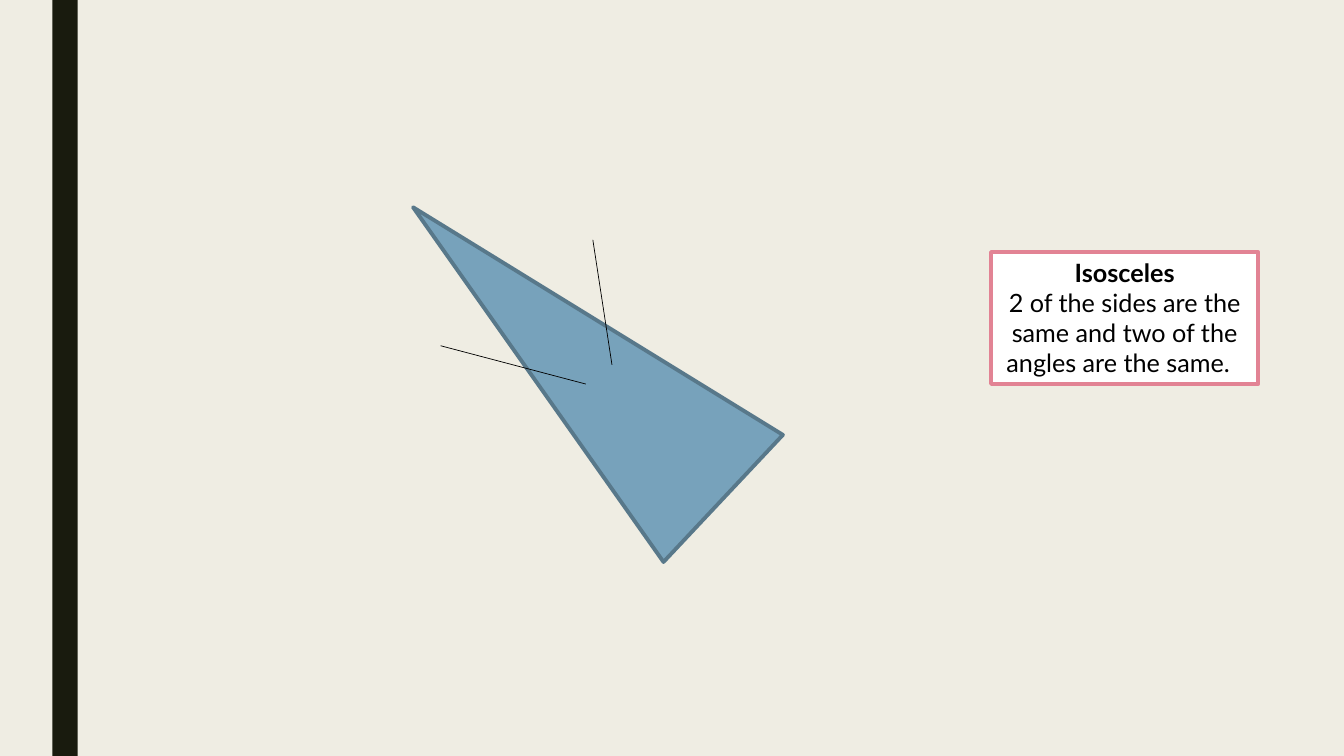
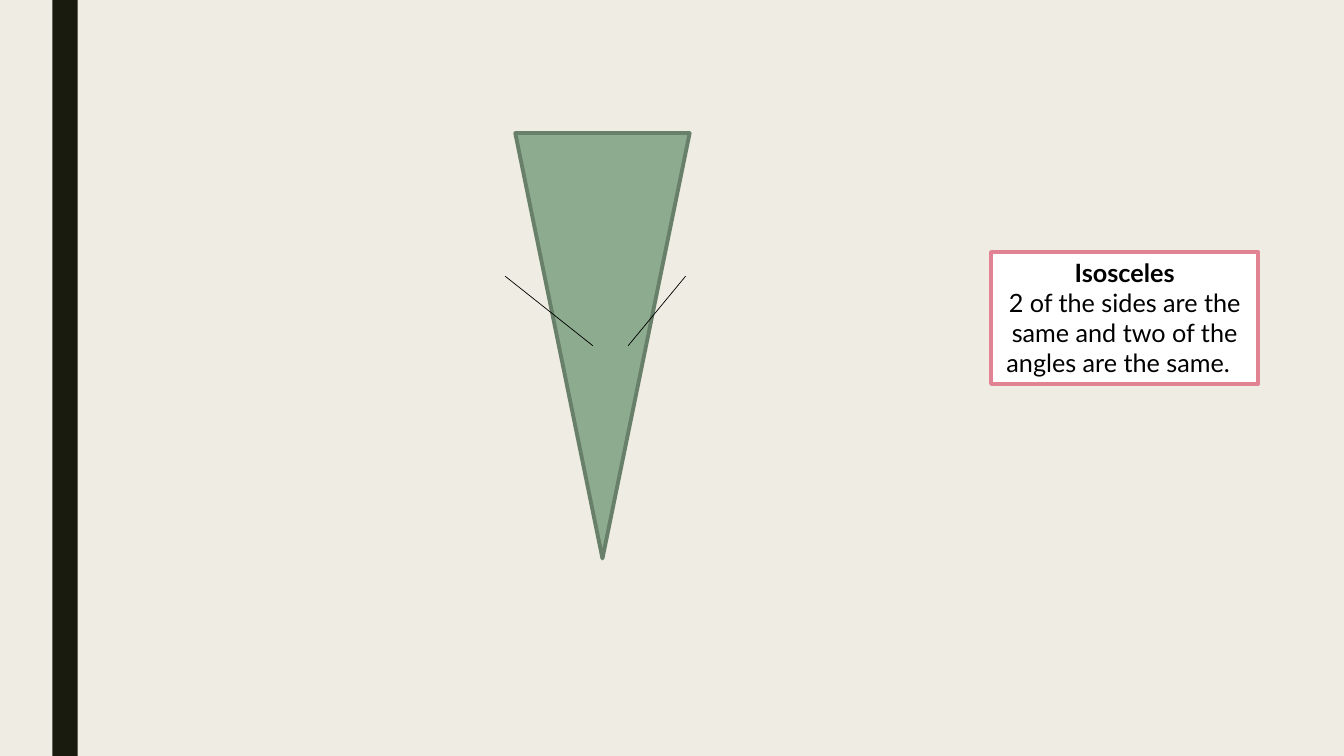
"""Build two slides on isosceles triangles, each with its side marks and definition."""
import dataclasses

import lxml.etree
import pptx
import pptx.dml.color
import pptx.enum.shapes
import pptx.enum.text
import pptx.oxml.ns
import pptx.util

Inches = pptx.util.Inches
Preset = pptx.enum.shapes.MSO_SHAPE

DEFINITION = (
    ("Isosceles", True),
    ("2 of the sides are the same and two of the angles are the same.  ", False),
)
TRIANGLES = (
    {"corner": (4.77, 1.39), "turn": 313.2, "fill": "77A2BB", "outline": "58788A",
     "marks": ((4.37, 3.43, 5.81, 3.81), (5.88, 2.38, 6.07, 3.62))},
    {"corner": (5.11, 1.32), "turn": 180, "fill": "8DAB8E", "outline": "687F69",
     "marks": ((5.01, 2.74, 5.88, 3.43), (6.8, 2.74, 6.23, 3.43))},
)

PAGE_SIZE = (13.33, 7.5)
BAND_AREA = (0.52, 0, 0.25, PAGE_SIZE[1])
DEFINITION_AREA = (9.83, 2.5, 2.65, 1.31)
TRIANGLE_SIZE = (1.73, 4.22)


@dataclasses.dataclass(frozen=True)
class Theme:
    background: str = "EFEDE3"
    band: str = "191B0E"
    paper: str = "FFFFFF"
    accent: str = "E28394"
    ink: str = "000000"
    font: str = "Lato"
    text_size: float = 18
    outline_width: float = 2.75
    mark_width: float = 0.5


THEME = Theme()


def color(value):
    return pptx.dml.color.RGBColor.from_string(value)


def add_panel(page, preset, area, fill, outline=None):
    panel = page.shapes.add_shape(preset, *map(Inches, area))
    panel.shadow.inherit = False
    panel.fill.solid()
    panel.fill.fore_color.rgb = color(fill)
    if outline:
        panel.line.color.rgb = color(outline)
        panel.line.width = pptx.util.Pt(THEME.outline_width)
    else:
        panel.line.fill.background()
    return panel


def add_mark(page, ends):
    straight = pptx.enum.shapes.MSO_CONNECTOR.STRAIGHT
    mark = page.shapes.add_connector(straight, *map(Inches, ends))
    mark.line.color.rgb = color(THEME.ink)
    mark.line.width = pptx.util.Pt(THEME.mark_width)
    lxml.etree.SubElement(mark.element.spPr, pptx.oxml.ns.qn("a:effectLst"))


def add_text(para, text, bold=False):
    para.alignment = pptx.enum.text.PP_ALIGN.CENTER
    span = para.add_run()
    span.text = text
    span.font.name = THEME.font
    span.font.size = pptx.util.Pt(THEME.text_size)
    span.font.bold = bold
    span.font.color.rgb = color(THEME.ink)


def add_definition(page):
    box = add_panel(page, Preset.RECTANGLE, DEFINITION_AREA, THEME.paper, THEME.accent)
    frame = box.text_frame
    frame.word_wrap = True
    frame.auto_size = pptx.enum.text.MSO_AUTO_SIZE.SHAPE_TO_FIT_TEXT
    frame.vertical_anchor = pptx.enum.text.MSO_ANCHOR.TOP
    for index, (text, bold) in enumerate(DEFINITION):
        para = frame.add_paragraph() if index else frame.paragraphs[0]
        add_text(para, text, bold=bold)


def add_page(deck, triangle):
    page = deck.slides.add_slide(deck.slide_layouts[6])
    page.background.fill.solid()
    page.background.fill.fore_color.rgb = color(THEME.background)
    add_panel(page, Preset.RECTANGLE, BAND_AREA, THEME.band)
    add_definition(page)
    shape = add_panel(page, Preset.ISOSCELES_TRIANGLE, triangle["corner"] + TRIANGLE_SIZE,
                      triangle["fill"], triangle["outline"])
    shape.rotation = triangle["turn"]
    for ends in triangle["marks"]:
        add_mark(page, ends)


def main():
    deck = pptx.Presentation()
    deck.slide_width, deck.slide_height = map(Inches, PAGE_SIZE)
    for triangle in TRIANGLES:
        add_page(deck, triangle)
    deck.save("out.pptx")


if __name__ == "__main__":
    main()
